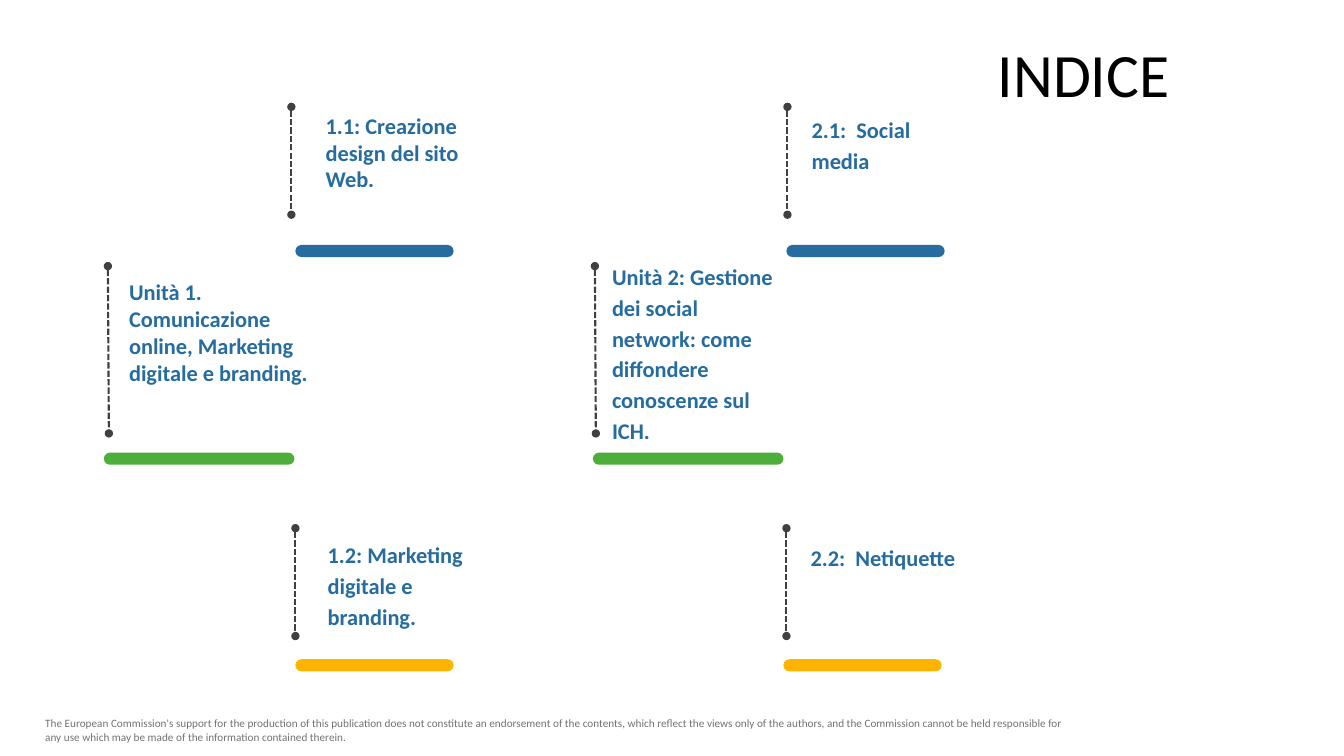
"""Builds the course index slide with its units, topics and bars."""
from dataclasses import dataclass

from lxml.etree import SubElement
from pptx import Presentation
from pptx.dml.color import RGBColor as RGB
from pptx.enum.shapes import MSO_CONNECTOR as Link, MSO_SHAPE as Shape
from pptx.enum.text import MSO_ANCHOR as Anchor, MSO_AUTO_SIZE as Auto, PP_ALIGN as Align
from pptx.oxml.ns import qn
from pptx.util import Inches, Pt


@dataclass(frozen=True)
class Theme:
    font: str = "Calibri"
    blue: str = "266C9F"
    green: str = "4EAE3A"
    gold: str = "FFB500"
    dark: str = "404040"
    gray: str = "767171"
    black: str = "000000"
    title: int = 44
    label: int = 16
    note: int = 8


THEME = Theme()
UNIT, TOPIC = 1.89, 1.57


def add_text(slide, box, text, size, color, bold=False, inset=0.1,
             align=None, space=None, after=None, auto=Auto.SHAPE_TO_FIT_TEXT):
    shape = slide.shapes.add_textbox(*map(Inches, box))
    frame = shape.text_frame
    frame.word_wrap = True
    frame.auto_size = auto
    frame.margin_left = frame.margin_right = Inches(inset)
    para = frame.paragraphs[0]
    para.alignment = align
    para.line_spacing = space
    para.space_after = after
    run = para.add_run()
    run.text = text
    font = run.font
    font.name, font.size, font.bold = THEME.font, Pt(size), bold
    font.color.rgb = RGB.from_string(color)
    return shape


def add_label(slide, box, text, loose=True, align=None, indent=0):
    space, after = (1.15, Pt(10)) if loose else (None, None)
    shape = add_text(slide, box, text, THEME.label, THEME.blue, True, 0.12,
                     align, space, after)
    if indent:
        props = shape.text_frame.paragraphs[0]._p.get_or_add_pPr()
        props.set("marL", str(Inches(indent)))
        props.set("indent", "0")


def add_bar(slide, left, top, width, color):
    bar = slide.shapes.add_shape(
        Shape.ROUNDED_RECTANGLE, *map(Inches, (left, top, width, 0.12)))
    bar.adjustments[0] = 0.5
    bar.shadow.inherit = False
    bar.fill.solid()
    bar.fill.fore_color.rgb = RGB.from_string(color)
    bar.line.fill.background()


def add_rule(slide, left, top, height, lean=0):
    rule = slide.shapes.add_connector(
        Link.STRAIGHT, *map(Inches, (left, top, left + lean, top + height)))
    rule.line.width = Pt(1.5)
    rule.line.color.rgb = RGB.from_string(THEME.dark)
    line = rule.line._get_or_add_ln()
    SubElement(line, qn("a:prstDash"), val="sysDash")
    for end in ("a:headEnd", "a:tailEnd"):
        SubElement(line, qn(end), type="oval")
    SubElement(rule._element.spPr, qn("a:effectLst"))


def main():
    deck = Presentation()
    deck.slide_width, deck.slide_height = Inches(13.33), Inches(7.5)
    slide = deck.slides.add_slide(deck.slide_layouts[6])

    add_text(slide, (0.35, 7.06, 10.46, 0.37),
             "The European Commission's support for the production of this "
             "publication does not constitute an endorsement of the contents, "
             "which reflect the views only of the authors, and the Commission "
             "cannot be held responsible for any use which may be made of the "
             "information contained therein.", THEME.note, THEME.gray)
    title = add_text(slide, (3.09, 0.37, 8.61, 0.79), "INDICE", THEME.title,
                     THEME.black, align=Align.RIGHT, space=0.9, auto=Auto.NONE)
    title.text_frame.vertical_anchor = Anchor.MIDDLE

    for left, top, width, color in (
            (1.03, 4.49, UNIT, THEME.green), (5.88, 4.49, UNIT, THEME.green),
            (2.93, 2.43, TOPIC, THEME.blue), (7.8, 2.43, TOPIC, THEME.blue),
            (2.93, 6.54, TOPIC, THEME.gold), (7.77, 6.54, TOPIC, THEME.gold)):
        add_bar(slide, left, top, width, color)

    for left in (1.07, 5.9):
        add_rule(slide, left, 2.64, 1.66, 0.01)
    for left, top in ((2.89, 1.06), (7.81, 1.06), (2.93, 5.24), (7.8, 5.24)):
        add_rule(slide, left, top, 1.07)

    add_label(slide, (1.16, 2.71, 2.12, 1.18),
              "Unità 1. Comunicazione online, Marketing digitale e branding.",
              loose=False)
    add_label(slide, (3.11, 1.06, 1.73, 1.18),
              "1.1: Creazione design del sito Web.", loose=False)
    add_label(slide, (3.13, 5.28, 1.73, 1.01),
              "1.2: Marketing digitale e branding.")
    add_label(slide, (5.7, 2.52, 2.21, 1.94),
              "Unità 2: Gestione dei social network: come diffondere "
              "conoscenze sul ICH.", indent=0.25)
    add_label(slide, (7.93, 1.06, 1.73, 0.39), "2.1:  Social media")
    add_label(slide, (7.92, 5.31, 1.73, 0.39), "2.2:  Netiquette",
              align=Align.JUSTIFY)
    deck.save("out.pptx")


if __name__ == "__main__":
    main()
